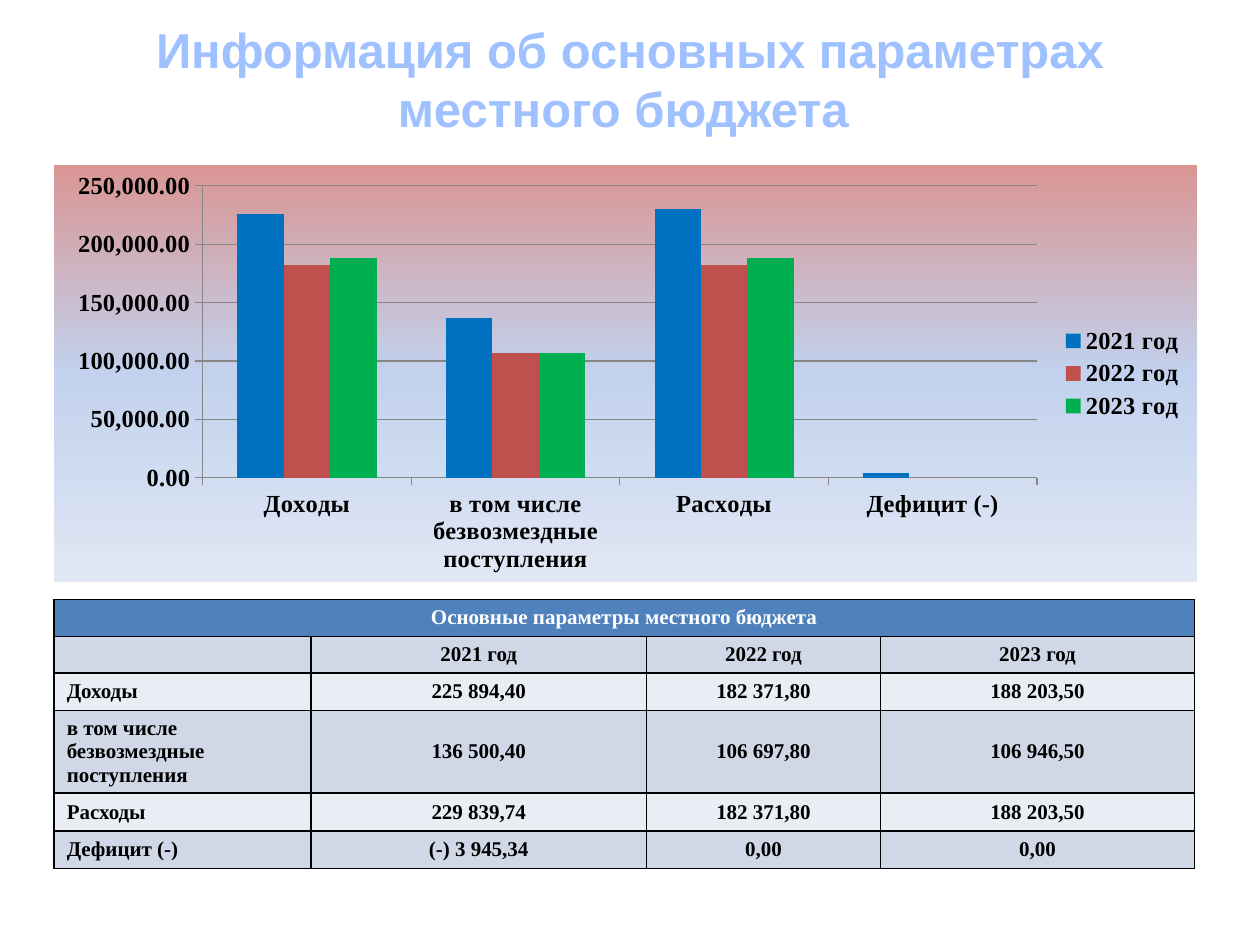
from dataclasses import dataclass

from lxml.etree import _Element as Node
from pptx import Presentation
from pptx.chart.data import CategoryChartData
from pptx.dml.color import RGBColor
from pptx.enum.chart import XL_CHART_TYPE, XL_LEGEND_POSITION, XL_TICK_MARK
from pptx.enum.text import MSO_ANCHOR, PP_ALIGN
from pptx.oxml import parse_xml
from pptx.oxml.ns import nsdecls, qn
from pptx.util import Inches, Pt

FONT = "Times New Roman"
HEX = {
    "title": "A0C1FF", "head": "4F81BD", "dark": "D0D8E8", "light": "E9EDF4",
    "black": "000000", "white": "FFFFFF", "grid": "868686",
}
STOPS = [(0, "D99694"), (50, "C2D1ED"), (100, "E1E8F5")]
AREA = {"x": 0.13, "y": 0.05, "w": 0.73, "h": 0.7}


@dataclass
class Year:
    name: str
    color: str
    bars: list[int]


@dataclass
class Item:
    name: str
    sums: list[str]
    height: float = 0.3


YEARS = [
    Year("2021 год", "0070C0", [226000, 137000, 230000, 4000]),
    Year("2022 год", "C0504D", [182000, 107000, 182000, 0]),
    Year("2023 год", "00B050", [188000, 107000, 188000, 0]),
]
ITEMS = [
    Item("Доходы", ["225 894,40", "182 371,80", "188 203,50"]),
    Item("в том числе безвозмездные поступления",
         ["136 500,40", "106 697,80", "106 946,50"], 0.65),
    Item("Расходы", ["229 839,74", "182 371,80", "188 203,50"]),
    Item("Дефицит (-)", ["(-) 3 945,34", "0,00", "0,00"]),
]
COLS = [2.04, 2.66, 1.86, 2.49]


def style(font, size: int, color: str, name: str = FONT) -> None:
    font.name, font.size, font.bold = name, Pt(size), True
    font.color.rgb = RGBColor.from_string(HEX[color])


def add_title(slide) -> None:
    title = slide.shapes.title
    title.left, title.top = Inches(0.5), Inches(0.3)
    title.width, title.height = Inches(9), Inches(0.64)
    frame = title.text_frame
    frame.text = "Информация об основных параметрах местного бюджета "
    frame.vertical_anchor = MSO_ANCHOR.MIDDLE
    para = frame.paragraphs[0]
    para.alignment = PP_ALIGN.CENTER
    style(para.font, 28, "title", "Arial")


def shade(root: Node) -> None:
    """Give the chart its gradient ground and fix the plot area."""
    stops = "".join(
        f'<a:gs pos="{pos * 1000}"><a:srgbClr val="{color}"/></a:gs>'
        for pos, color in STOPS)
    body = root.find(qn("c:chart"))
    body.addnext(parse_xml(
        f'<c:spPr {nsdecls("c", "a")}><a:gradFill><a:gsLst>{stops}</a:gsLst>'
        '<a:lin ang="5400000" scaled="0"/></a:gradFill>'
        '<a:ln><a:noFill/></a:ln></c:spPr>'))
    plot = body.find(qn("c:plotArea"))
    for old in plot.findall(qn("c:layout")):
        plot.remove(old)
    sizes = "".join(f'<c:{key} val="{val}"/>' for key, val in AREA.items())
    plot.insert(0, parse_xml(
        f'<c:layout {nsdecls("c")}><c:manualLayout>'
        '<c:layoutTarget val="inner"/><c:xMode val="edge"/>'
        f'<c:yMode val="edge"/>{sizes}</c:manualLayout></c:layout>'))


def add_bars(slide) -> None:
    data = CategoryChartData(number_format="#,##0.00")
    data.categories = [item.name for item in ITEMS]
    for year in YEARS:
        data.add_series(year.name, year.bars)
    chart = slide.shapes.add_chart(
        XL_CHART_TYPE.COLUMN_CLUSTERED, Inches(0.43), Inches(1.31),
        Inches(9.07), Inches(3.31), data).chart
    style(chart.font, 14, "black")
    chart.has_title = False
    chart.has_legend = True
    chart.legend.position = XL_LEGEND_POSITION.RIGHT
    chart.legend.include_in_layout = False

    plot = chart.plots[0]
    plot.gap_width, plot.overlap = 150, 0
    plot.vary_by_categories = False
    for bar, year in zip(plot.series, YEARS):
        bar.format.fill.solid()
        bar.format.fill.fore_color.rgb = RGBColor.from_string(year.color)

    axis = chart.value_axis
    axis.has_major_gridlines = True
    axis.minimum_scale, axis.maximum_scale, axis.major_unit = 0, 250000, 50000
    axis.tick_labels.number_format = "#,##0.00"
    axis.tick_labels.number_format_is_linked = False
    for part in (axis, chart.category_axis):
        part.major_tick_mark = XL_TICK_MARK.OUTSIDE
    for part in (axis, chart.category_axis, axis.major_gridlines):
        part.format.line.color.rgb = RGBColor.from_string(HEX["grid"])
        part.format.line.width = Pt(0.75)
    shade(chart.element)


def fill_cell(cell, text: str, ground: str, ink: str, left: bool) -> None:
    cell.text = text
    cell.vertical_anchor = MSO_ANCHOR.MIDDLE
    para = cell.text_frame.paragraphs[0]
    para.alignment = PP_ALIGN.LEFT if left else PP_ALIGN.CENTER
    style(para.font, 12, ink)
    cell.fill.solid()
    cell.fill.fore_color.rgb = RGBColor.from_string(HEX[ground])
    props = cell._tc.get_or_add_tcPr()
    for spot, side in enumerate("LRTB"):
        props.insert(spot, parse_xml(
            f'<a:ln{side} {nsdecls("a")} w="12700"><a:solidFill>'
            f'<a:srgbClr val="{HEX["black"]}"/></a:solidFill></a:ln{side}>'))


def add_sums(slide) -> None:
    rows = [
        Item("Основные параметры местного бюджета", [""] * len(YEARS), 0.29),
        Item("", [year.name for year in YEARS], 0.29),
        *ITEMS,
    ]
    table = slide.shapes.add_table(
        len(rows), len(COLS), Inches(0.43), Inches(4.76), Inches(sum(COLS)),
        Inches(sum(row.height for row in rows))).table
    for col, width in zip(table.columns, COLS):
        col.width = Inches(width)
    for r, row in enumerate(rows):
        table.rows[r].height = Inches(row.height)
        ground = "head" if r == 0 else "dark" if r % 2 else "light"
        ink = "black" if r else "white"
        for c, text in enumerate([row.name, *row.sums]):
            fill_cell(table.cell(r, c), text, ground, ink, r > 0 and c == 0)
    table.cell(0, 0).merge(table.cell(0, len(COLS) - 1))
    table.cell(0, 0).vertical_anchor = MSO_ANCHOR.TOP


def main() -> None:
    deck = Presentation()
    deck.slide_width, deck.slide_height = Inches(10), Inches(7.5)
    slide = deck.slides.add_slide(deck.slide_layouts.get_by_name("Title Only"))
    add_title(slide)
    add_sums(slide)
    add_bars(slide)
    deck.save("out.pptx")


if __name__ == "__main__":
    main()
